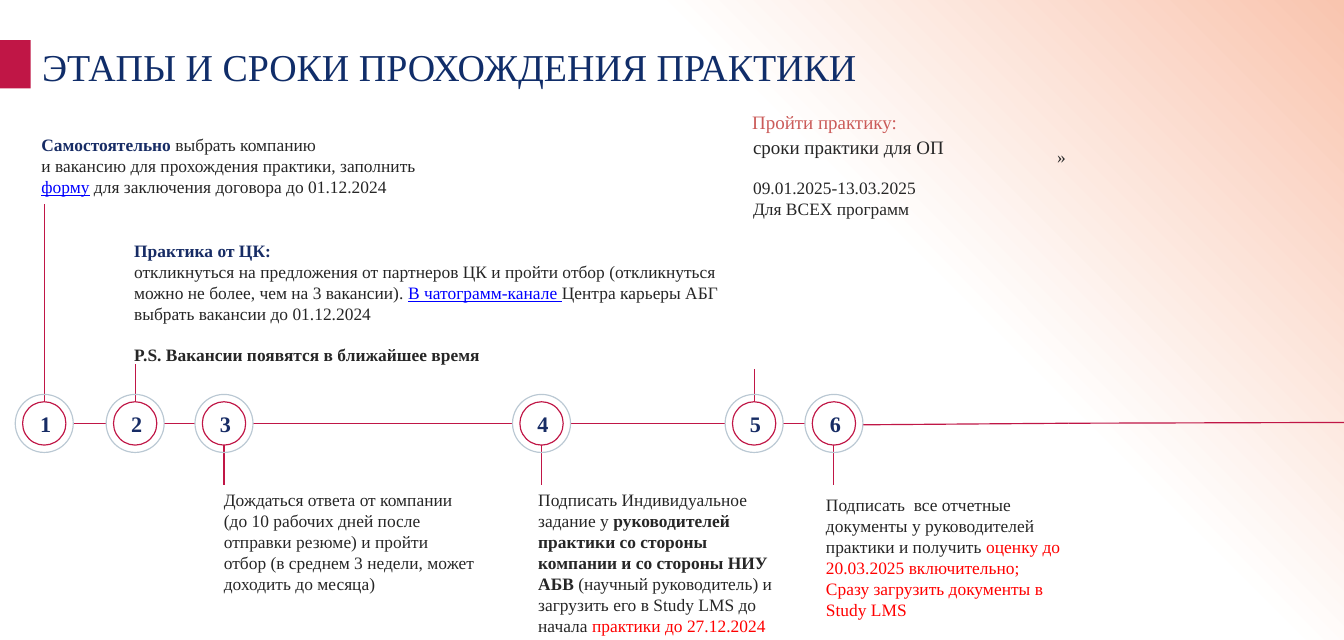
from itertools import pairwise

from lxml import etree
from pptx import Presentation
from pptx import util as u
from pptx.dml.color import RGBColor
from pptx.enum import shapes, text
from pptx.oxml.ns import qn

NAVY = RGBColor(0x17, 0x2C, 0x65)
TITLE_NAVY = RGBColor(0x10, 0x2D, 0x69)
CRIMSON = RGBColor(0xC0, 0x16, 0x46)
ROSE = RGBColor(0xCB, 0x5B, 0x59)
SILVER = RGBColor(0xBA, 0xC8, 0xD3)
INK = RGBColor(0x26, 0x26, 0x26)
BLUE = RGBColor(0x00, 0x00, 0xFF)
RED = RGBColor(0xFF, 0x00, 0x00)
PEACH = RGBColor(0xF9, 0xC5, 0xAF)
WHITE = RGBColor(0xFF, 0xFF, 0xFF)

WIDTH, HEIGHT = 850.32, 404.64
AXIS = 267.7
RING, DISC = 36.7, 27.4


class SlideBuilder:
    font = "Times New Roman"
    line_width = 0.75

    def __init__(self, page):
        self.page = page

    def background(self):
        fill = self.page.background.fill
        fill.gradient()
        fill.gradient_angle = 45
        for stop, color, position in zip(fill.gradient_stops, (WHITE, PEACH), (0.65, 1)):
            stop.color.rgb = color
            stop.position = position

    def style(self, font, size, color, bold=False):
        font.name, font.size, font.bold = self.font, u.Pt(size), bold
        font.color.rgb = color

    def line(self, x1, y1, x2, y2):
        line = self.page.shapes.add_connector(
            shapes.MSO_CONNECTOR.STRAIGHT, u.Pt(x1), u.Pt(y1), u.Pt(x2), u.Pt(y2))
        line.line.color.rgb = CRIMSON
        line.line.width = u.Pt(self.line_width)
        etree.SubElement(line._element.spPr, qn("a:effectLst"))

    def shape(self, kind, x, y, width, height, fill=None, outline=None):
        shape = self.page.shapes.add_shape(
            kind, u.Pt(x), u.Pt(y), u.Pt(width), u.Pt(height))
        shape.shadow.inherit = False
        if fill is None:
            shape.fill.background()
        else:
            shape.fill.solid()
            shape.fill.fore_color.rgb = fill
        if outline is None:
            shape.line.fill.background()
        else:
            shape.line.color.rgb = outline
            shape.line.width = u.Pt(self.line_width)
        return shape

    def circle(self, center, diameter, outline):
        return self.shape(shapes.MSO_SHAPE.OVAL, center - diameter / 2,
                          AXIS - diameter / 2, diameter, diameter, outline=outline)

    def milestone(self, number, center):
        self.circle(center, RING, SILVER)
        frame = self.circle(center, DISC, CRIMSON).text_frame
        frame.margin_top = frame.margin_bottom = u.Pt(7.2)
        frame.vertical_anchor = text.MSO_ANCHOR.MIDDLE
        para = frame.paragraphs[0]
        para.alignment = text.PP_ALIGN.CENTER
        para.text = str(number)
        self.style(para.font, 14, NAVY, True)

    def text(self, x, y, width, height, paragraphs, size=11, color=INK,
             inset=True, gap=0):
        """Each paragraph is a list of spans: (text, {font attribute: value})."""
        box = self.page.shapes.add_textbox(u.Pt(x), u.Pt(y), u.Pt(width), u.Pt(height))
        frame = box.text_frame
        frame.word_wrap = True
        if not inset:
            frame.margin_left = frame.margin_right = frame.margin_bottom = 0
            frame.margin_top = u.Pt(0.7)
        for index, spans in enumerate(paragraphs):
            para = frame.add_paragraph() if index else frame.paragraphs[0]
            self.style(para.font, size, color)
            for words, look in spans:
                span = para.add_run()
                span.text = words
                for name, value in look.items():
                    if name == "color":
                        span.font.color.rgb = value
                    else:
                        setattr(span.font, name, value)
        para.space_before = u.Pt(gap)


PLAIN = {}
BOLD = {"bold": True}
LEAD = {"bold": True, "color": NAVY}
LINK = {"underline": True, "color": BLUE}
ALERT = {"color": RED}


def main():
    deck = Presentation()
    deck.slide_width, deck.slide_height = u.Pt(WIDTH), u.Pt(HEIGHT)
    slide = SlideBuilder(deck.slides.add_slide(deck.slide_layouts[6]))
    slide.background()

    # Title
    slide.shape(shapes.MSO_SHAPE.RECTANGLE, 0, 25.4, 19.4, 30.5, fill=CRIMSON)
    slide.text(26.6, 26.6, 602, 22.3, [[("ЭТАПЫ И СРОКИ ПРОХОЖДЕНИЯ ПРАКТИКИ", PLAIN)]],
               size=24, color=TITLE_NAVY, inset=False)

    # Timeline: milestone centres and the far ends of their stems
    centers = [28, 85.5, 141.7, 342.6, 477.1, 527.6]
    stem_ends = [128.9, 230.4, 306.7, 306.7, 233.3, 306.7]
    for left, right in pairwise(centers):
        slide.line(left + RING / 2, AXIS, right - RING / 2, AXIS)
    slide.line(centers[-1] + RING / 2, 268.6, 676.1, 267.6)
    slide.line(676.1, 267.6, WIDTH, 267.1)
    for number, (center, end) in enumerate(zip(centers, stem_ends), 1):
        side = 1 if end > AXIS else -1
        slide.line(center, AXIS + side * DISC / 2, center, end)
        slide.milestone(number, center)

    # Steps above the axis
    slide.text(19.1, 81.4, 258.5, 47.5, [
        [("Самостоятельно ", LEAD), ("выбрать компанию", PLAIN)],
        [("и вакансию для прохождения практики, заполнить ", PLAIN), ("форму", LINK),
         (" для заключения договора до 01.12.2024", PLAIN)],
    ])
    slide.text(77.8, 148.3, 384.5, 87.1, [
        [("Практика от ЦК:", LEAD)],
        [("откликнуться на предложения от партнеров ЦК и пройти отбор "
          "(откликнуться можно не более, чем на 3 вакансии). ", PLAIN),
         ("В чатограмм-канале ", LINK),
         ("Центра карьеры АБГ выбрать вакансии до 01.12.2024", PLAIN)],
        [("P.S. Вакансии появятся в ближайшее время", BOLD)],
    ], gap=13)
    slide.text(475.9, 69.1, 170.6, 24.5, [[("Пройти практику:", PLAIN)]],
               size=12, color=ROSE, inset=False)
    slide.text(469.4, 82.1, 216, 21.6, [[("cроки практики для ОП", PLAIN)]], size=12)
    slide.text(469.4, 108.7, 189.4, 33.8, [
        [("09.01.2025-13.03.2025", PLAIN)],
        [("Для ВСЕХ программ", PLAIN)],
    ])
    slide.text(661.7, 88.6, 149, 20.9, [[("»", PLAIN)]])

    # Steps below the axis
    slide.text(134.6, 306, 172.8, 74.2, [
        [("Дождаться ответа от компании (до 10 рабочих дней после отправки резюме) "
          "и пройти отбор (в среднем 3 недели, может доходить до месяца)", PLAIN)],
    ])
    slide.text(333.4, 306, 164.2, 100.8, [
        [("Подписать Индивидуальное задание у ", PLAIN),
         ("руководителей практики со стороны компании и со стороны НИУ АБВ ", BOLD),
         ("(научный руководитель) и загрузить его в Study LMS до начала ", PLAIN),
         ("практики до 27.12.2024", ALERT)],
    ])
    slide.text(515.5, 308.9, 170.6, 87.1, [
        [("Подписать  все отчетные документы у руководителей практики и получить ", PLAIN),
         ("оценку до 20.03.2025 включительно;", ALERT)],
        [("Сразу загрузить документы в Study LMS", ALERT)],
    ])

    deck.save("out.pptx")


if __name__ == "__main__":
    main()
